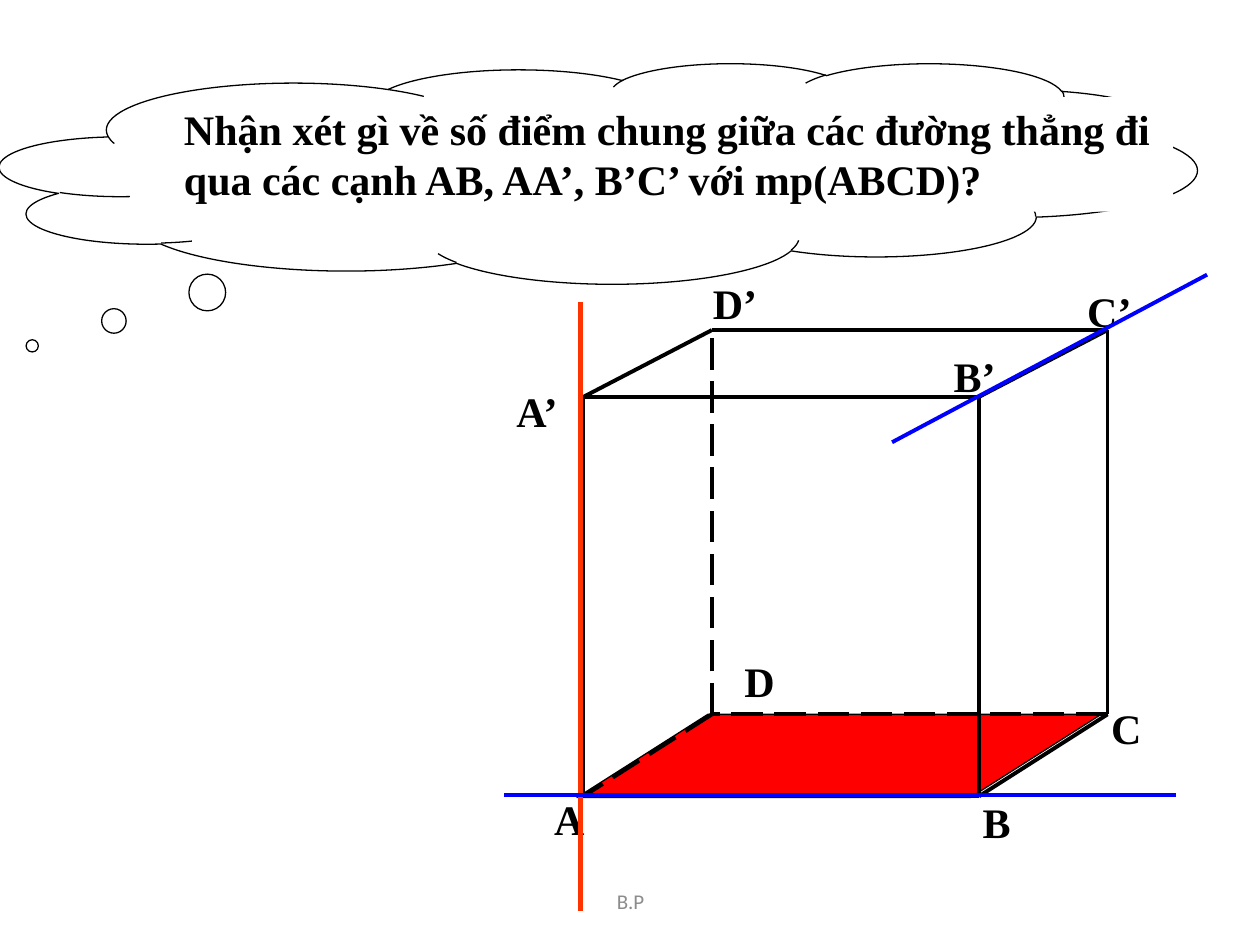
from pptx import Presentation
from pptx.util import Inches, Pt
from pptx.dml.color import RGBColor
from pptx.enum import dml, shapes as kinds, text as txt
from pptx.oxml.ns import qn
from lxml import etree

HUES = {"ink": "000000", "paper": "FFFFFF", "base": "FF0000",
        "orange": "FF3300", "blue": "0000FF", "gray": "8C8C8C"}

deck = Presentation()
deck.slide_width, deck.slide_height = Inches(10), Inches(7.5)
slide = deck.slides.add_slide(deck.slide_layouts[5])
items = slide.shapes


def write(box, words, size=24, font="Times New Roman", hue="ink", bold=True,
          align=txt.PP_ALIGN.LEFT, anchor=txt.MSO_ANCHOR.TOP):
    frame = box.text_frame
    frame.text = words
    frame.word_wrap = True
    frame.auto_size = txt.MSO_AUTO_SIZE.NONE
    frame.vertical_anchor = anchor
    par = frame.paragraphs[0]
    par.alignment = align
    face = par.runs[0].font
    face.name, face.size, face.bold = font, Pt(size), bold
    face.color.rgb = RGBColor.from_string(HUES[hue])


def draw(start, end, hue="ink", width=2.25, dashed=False):
    ends = [Inches(v) for v in (*start, *end)]
    edge = items.add_connector(kinds.MSO_CONNECTOR.STRAIGHT, *ends)
    edge.line.color.rgb = RGBColor.from_string(HUES[hue])
    edge.line.width = Pt(width)
    if dashed:
        edge.line.dash_style = dml.MSO_LINE.LONG_DASH
    etree.SubElement(edge._element.spPr, qn("a:effectLst"))


# Footer
foot = items.add_textbox(Inches(3.42), Inches(6.95), Inches(3.17), Inches(0.4))
write(foot, "B.P", 12, "Calibri", "gray", False,
      txt.PP_ALIGN.CENTER, txt.MSO_ANCHOR.MIDDLE)

# Thought cloud and red base
solids = [
    (kinds.MSO_SHAPE.CLOUD_CALLOUT, (0, 0.5, 9.5, 1.75), (-0.473, 0.783), "paper"),
    (kinds.MSO_SHAPE.PARALLELOGRAM, (4.58, 5.67, 4.16, 0.66), (1.573,), "base"),
]
for kind, place, bends, hue in solids:
    solid = items.add_shape(kind, *[Inches(v) for v in place])
    for i, bend in enumerate(bends):
        solid.adjustments[i] = bend
    solid.shadow.inherit = False
    solid.fill.solid()
    solid.fill.fore_color.rgb = RGBColor.from_string(HUES[hue])
    solid.line.color.rgb = RGBColor.from_string(HUES["ink"])
    solid.line.width = Pt(0.75)

# Question, brought in front of the cloud
title = items.title
title.left, title.top = Inches(1.36), Inches(0.77)
title.width, title.height = Inches(7.95), Inches(0.91)
title.fill.solid()
title.fill.fore_color.rgb = RGBColor.from_string(HUES["paper"])
write(title, "Nhận xét gì về số điểm chung giữa các đường thẳng đi "
      "qua các cạnh AB, AA’, B’C’ với mp(ABCD)?")
items._spTree.append(title._element)

# Corner labels
labels = [
    ("A", 4.3, 6.25, 0.76), ("B", 7.7, 6.27, 0.68),
    ("C", 8.72, 5.53, 0.59), ("D", 5.81, 5.15, 0.58),
    ("A’", 4, 3.01, 0.8), ("B’", 7.47, 2.73, 0.77),
    ("C’", 8.53, 2.22, 0.85), ("D’", 5.56, 2.15, 0.94),
]
for name, left, top, width in labels:
    label = items.add_textbox(Inches(left), Inches(top), Inches(width), Inches(0.53))
    write(label, name)

# Box edges; the hidden ones meet at D
spots = {"A": (4.63, 6.32), "B": (7.77, 6.32), "C": (8.79, 5.67), "D": (5.65, 5.67),
         "A’": (4.63, 3.15), "B’": (7.77, 3.15), "C’": (8.79, 2.62), "D’": (5.65, 2.62)}
ring = "ABCD"
for here, after in zip(ring, ring[1:] + ring[0]):
    draw(spots[here], spots[after], dashed="D" in (here, after))
    draw(spots[here + "’"], spots[after + "’"])
    draw(spots[here], spots[here + "’"], dashed=here == "D")

# Lines through AA’, AB and B’C’
draw((4.61, 2.4), (4.61, 7.23), "orange", 3)
draw((4, 6.31), (9.33, 6.31), "blue")
draw((9.58, 2.18), (7.08, 3.51), "blue")

deck.save("out.pptx")
